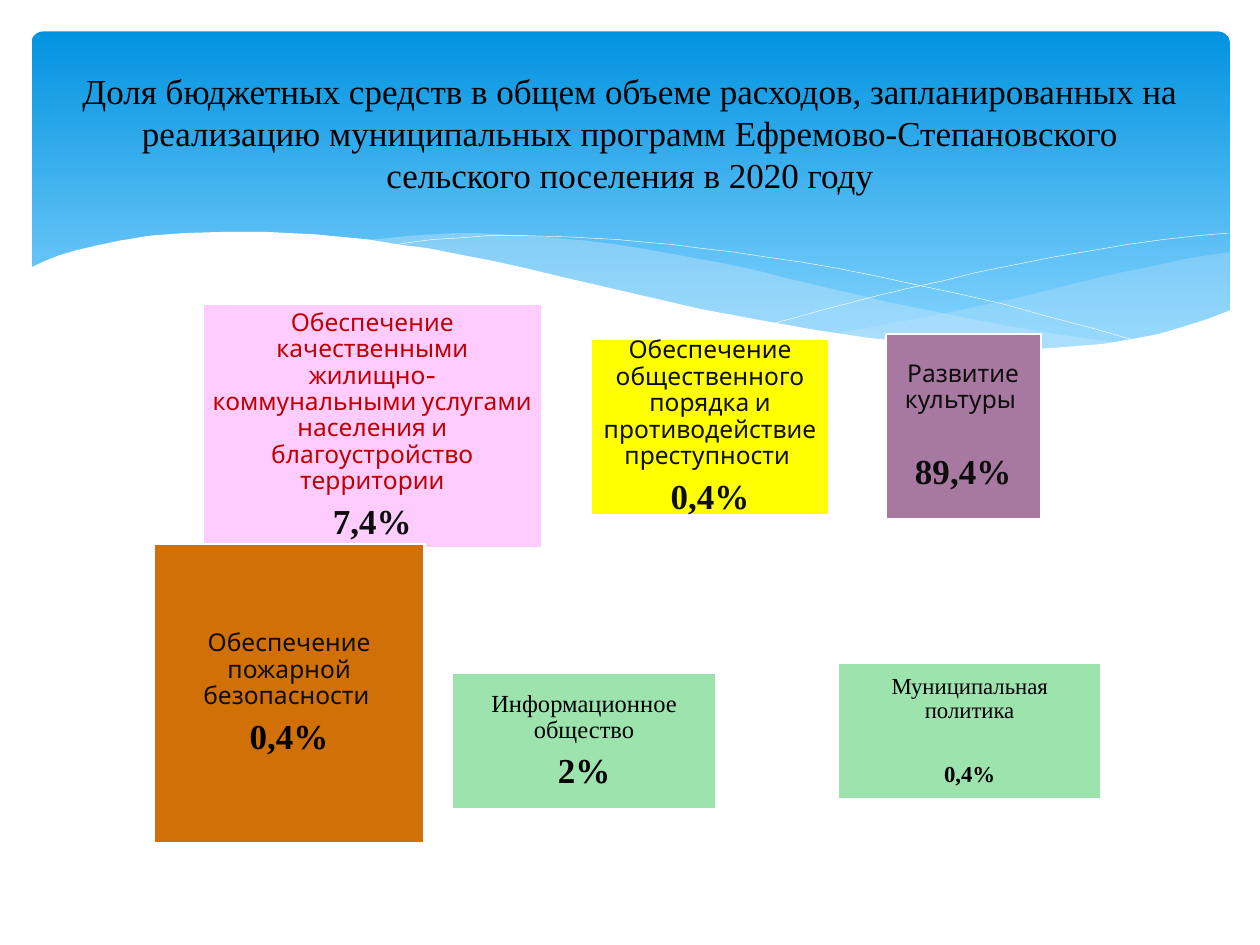
"""Build the slide on budget shares of municipal programmes in 2020."""
from dataclasses import dataclass

from lxml import etree
from pptx import Presentation
from pptx.dml.color import RGBColor as RGB
from pptx.enum.shapes import MSO_SHAPE as SHAPE
from pptx.enum.text import MSO_ANCHOR as ANCHOR, PP_ALIGN as ALIGN
from pptx.oxml.ns import qn
from pptx.util import Inches, Pt


@dataclass(frozen=True)
class Theme:
    sky_top: str = "0293E0"
    sky_low: str = "83D3FE"
    mist: str = "C6E7FC"
    white: str = "FFFFFF"
    black: str = "000000"
    ink: str = "0D0D0D"
    red: str = "C00000"
    pink: str = "FFCCFF"
    yellow: str = "FFFF00"
    mauve: str = "A779A0"
    orange: str = "D07006"
    green: str = "9DE3AE"
    sans: str = "Cabin"
    serif: str = "Times New Roman"
    large: int = 20
    normal: int = 14
    small: int = 13
    border: float = 1.25
    hairline: float = 0.25


T = Theme()


def add_run(p, text, font, size, color, bold=False):
    r = p.add_run()
    r.text = text
    r.font.name = font
    r.font.size = Pt(size)
    r.font.bold = bold
    r.font.color.rgb = RGB.from_string(color)


def add_wave(s, points, fill=None, opacity=100):
    pts = [(Inches(x), Inches(y)) for x, y in points]
    builder = s.shapes.build_freeform(*pts[0])
    builder.add_line_segments(pts[1:], close=fill is not None)
    sp = builder.convert_to_shape()
    sp.shadow.inherit = False
    if fill is None:
        sp.fill.background()
        sp.line.color.rgb = RGB.from_string(T.white)
        sp.line.width = Pt(T.hairline)
        return
    sp.line.fill.background()
    sp.fill.solid()
    sp.fill.fore_color.rgb = RGB.from_string(fill)
    if opacity < 100:
        color = sp.element.spPr.find(qn("a:solidFill"))[0]
        etree.SubElement(color, qn("a:alpha"), val=str(opacity * 1000))


prs = Presentation()
prs.slide_width, prs.slide_height = Inches(10), Inches(7.5)
s = prs.slides.add_slide(prs.slide_layouts[5])

sky = s.shapes.add_shape(SHAPE.ROUNDED_RECTANGLE, Inches(0.25), Inches(0.25), Inches(9.51), Inches(2.7))
sky.adjustments[0] = 0.034
sky.shadow.inherit = False
sky.line.fill.background()
sky.fill.gradient()
sky.fill.gradient_angle = 270
for stop, position, color in zip(sky.fill.gradient_stops, (0, 0.9), (T.sky_top, T.sky_low)):
    stop.position = position
    stop.color.rgb = RGB.from_string(color)

right_wave = [
    (9.76, 2), (9.48, 2.04), (9.21, 2.1), (8.91, 2.16), (8.61, 2.23), (8.05, 2.37),
    (7.53, 2.48), (7.06, 2.57), (6.61, 2.65), (6.91, 2.69), (7.19, 2.72), (7.45, 2.75),
    (7.69, 2.77), (8.03, 2.78), (8.35, 2.77), (8.63, 2.75), (8.89, 2.72), (9.13, 2.67),
    (9.35, 2.62), (9.49, 2.57), (9.76, 2.47)]
middle_wave = [
    (8.93, 2.73), (8.66, 2.69), (8.37, 2.65), (8.07, 2.6), (7.75, 2.54), (7.41, 2.47),
    (7.06, 2.4), (6.68, 2.31), (6.29, 2.22), (5.98, 2.14), (5.69, 2.08), (5.41, 2.03),
    (5.14, 1.98), (4.89, 1.94), (4.65, 1.91), (4.42, 1.89), (4.2, 1.87), (3.99, 1.86),
    (3.8, 1.85), (3.61, 1.85), (3.28, 1.87), (2.86, 1.91), (3.23, 1.96), (3.62, 2.03),
    (4.04, 2.11), (4.49, 2.22), (4.91, 2.32), (5.3, 2.4), (5.66, 2.48), (6.01, 2.55),
    (6.34, 2.61), (6.65, 2.66), (6.95, 2.7), (7.22, 2.74), (7.48, 2.76), (7.73, 2.77),
    (7.96, 2.78), (8.28, 2.78), (8.57, 2.77), (8.76, 2.75)]
falling_line = [
    (3.09, 1.95), (3.28, 1.92), (3.44, 1.9), (3.63, 1.89), (3.87, 1.87), (4.16, 1.87),
    (4.5, 1.88), (4.69, 1.89), (4.89, 1.9), (5.1, 1.92), (5.33, 1.94), (5.56, 1.97),
    (5.82, 2), (6.08, 2.04), (6.36, 2.08), (6.65, 2.13), (6.95, 2.19), (7.27, 2.26),
    (7.6, 2.33), (7.95, 2.41), (8.31, 2.51), (8.69, 2.61), (9.07, 2.72)]
rising_line = [
    (6.13, 2.57), (6.53, 2.46), (6.95, 2.35), (7.2, 2.29), (7.48, 2.23), (7.76, 2.16),
    (8.06, 2.1), (8.36, 2.04), (8.66, 1.99), (8.95, 1.94), (9.24, 1.9), (9.51, 1.87),
    (9.75, 1.85)]
front_wave = [
    (9.77, 2.46), (9.59, 2.53), (9.4, 2.59), (9.2, 2.65), (8.99, 2.69), (8.75, 2.73),
    (8.5, 2.75), (8.23, 2.77), (7.93, 2.76), (7.61, 2.75), (7.26, 2.72), (6.88, 2.68),
    (6.48, 2.62), (6.03, 2.54), (5.55, 2.45), (5.03, 2.33), (4.47, 2.2), (4.18, 2.13),
    (3.91, 2.07), (3.65, 2.02), (3.4, 1.97), (3.16, 1.94), (2.92, 1.9), (2.71, 1.88),
    (2.5, 1.86), (2.3, 1.85), (2.11, 1.84), (1.77, 1.84), (1.46, 1.85), (1.19, 1.87),
    (0.95, 1.91), (0.76, 1.95), (0.59, 1.99), (0.46, 2.03), (0.36, 2.07), (0.23, 2.13),
    (0.23, 3.29), (9.77, 3.29)]

add_wave(s, right_wave, T.mist, 29)
add_wave(s, middle_wave, T.mist, 40)
add_wave(s, falling_line)
add_wave(s, rising_line)
add_wave(s, front_wave, T.white)

programmes = [
    ((1.61, 2.41, 2.69, 1.94), T.pink,
     "Обеспечение качественными жилищно-коммунальными услугами населения и благоустройство территории",
     (T.sans, T.normal, T.red), 5, "7,4%", (T.serif, T.large, T.ink)),
    ((4.69, 2.69, 1.89, 1.4), T.yellow,
     "Обеспечение общественного порядка и противодействие преступности ",
     (T.sans, T.normal, T.ink), 5, "0,4%", (T.serif, T.large, T.ink)),
    ((7.03, 2.65, 1.23, 1.47), T.mauve, "Развитие культуры ",
     (T.sans, T.normal, T.ink), 23, "89,4%", (T.serif, T.large, T.ink)),
    ((1.22, 4.32, 2.15, 2.37), T.orange, "Обеспечение пожарной безопасности ",
     (T.sans, T.normal, T.ink), 5, "0,4%", (T.serif, T.large, T.black)),
    ((3.59, 5.34, 2.09, 1.08), T.green, "Информационное общество",
     (T.serif, T.normal, T.black), 5, "2%", (T.serif, T.large, T.black)),
    ((6.65, 5.26, 2.09, 1.08), T.green, "Муниципальная политика",
     (T.serif, T.small, T.black), 22, "0,4%", (T.serif, T.small, T.black)),
]
for box, fill, name, name_style, gap, share, share_style in programmes:
    sp = s.shapes.add_shape(SHAPE.RECTANGLE, *map(Inches, box))
    sp.shadow.inherit = False
    sp.fill.solid()
    sp.fill.fore_color.rgb = RGB.from_string(fill)
    sp.line.color.rgb = RGB.from_string(T.white)
    sp.line.width = Pt(T.border)
    tf = sp.text_frame
    tf.word_wrap = True
    tf.vertical_anchor = ANCHOR.MIDDLE
    tf.margin_left = tf.margin_right = tf.margin_top = tf.margin_bottom = Inches(0.06)
    p = tf.paragraphs[0]
    p.space_after = Pt(gap)
    add_run(p, name, *name_style)
    add_run(tf.add_paragraph(), share, *share_style, bold=True)
    for p in tf.paragraphs:
        p.alignment = ALIGN.CENTER
        p.line_spacing = 0.9

title = s.shapes.title
title.left, title.top, title.width, title.height = map(Inches, (0.5, 0.37, 9, 1.37))
tf = title.text_frame
tf.word_wrap = True
tf.vertical_anchor = ANCHOR.MIDDLE
p = tf.paragraphs[0]
p.alignment = ALIGN.CENTER
add_run(p, "Доля бюджетных средств в общем объеме расходов, запланированных на реализацию "
           "муниципальных программ Ефремово-Степановского сельского поселения в 2020 году",
        T.serif, T.large, T.black)
title.element.getparent().append(title.element)

prs.save("out.pptx")
